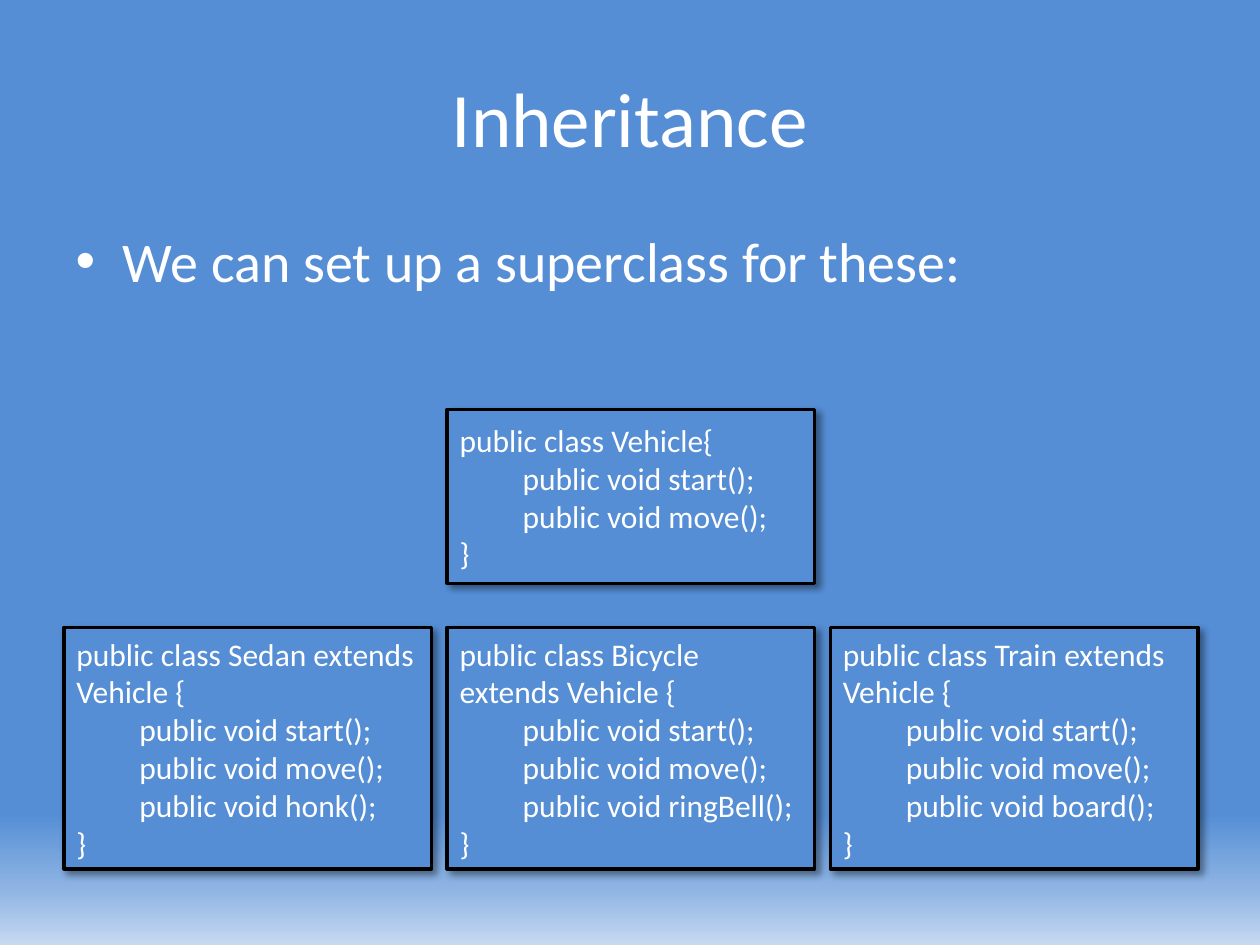
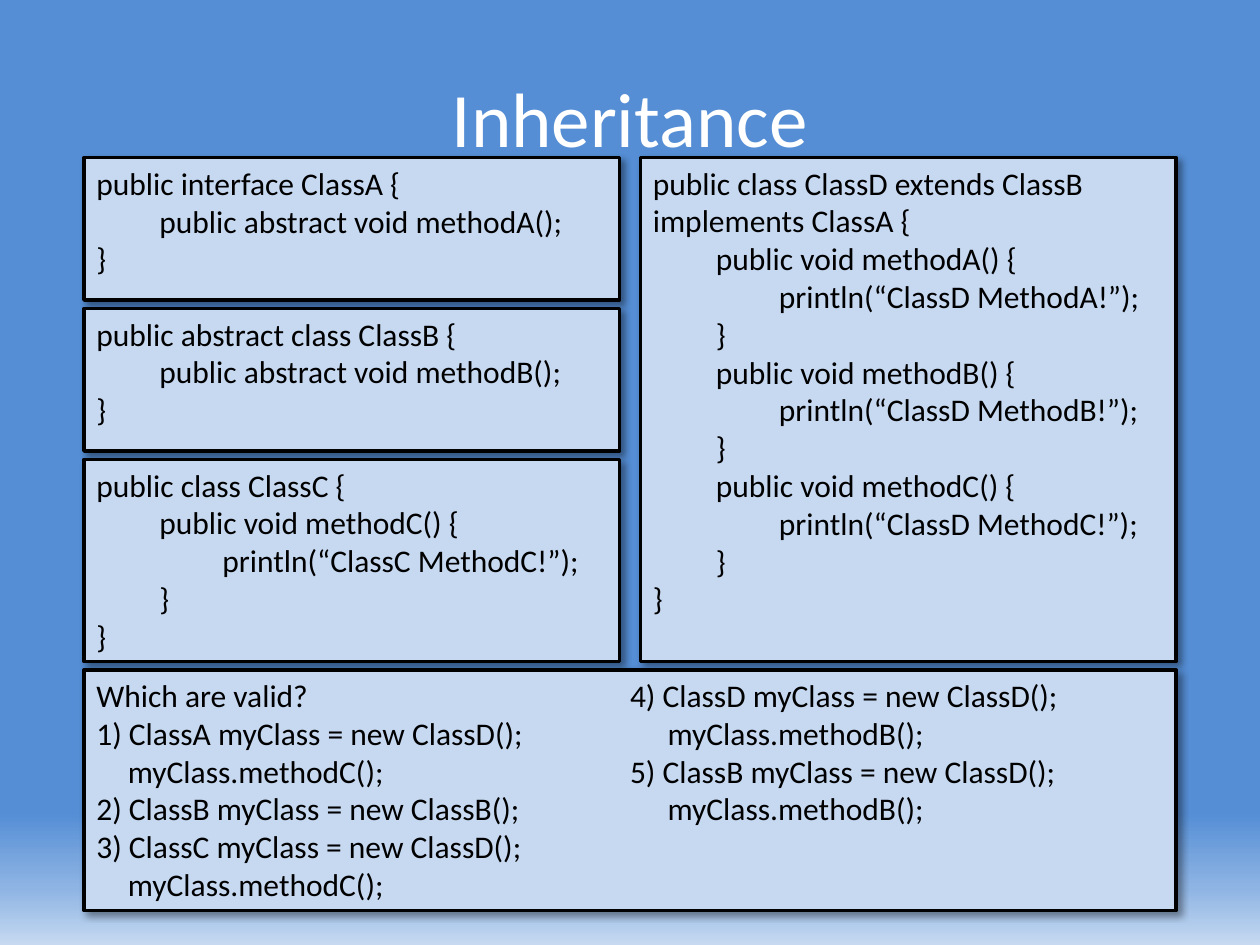
from lxml import etree
from pptx import Presentation
from pptx.dml.color import RGBColor
from pptx.enum.shapes import MSO_SHAPE
from pptx.enum.text import MSO_ANCHOR, PP_ALIGN
from pptx.oxml import parse_xml
from pptx.oxml.ns import nsdecls, qn
from pptx.util import Pt

RECTANGLE = MSO_SHAPE.RECTANGLE
TOP, MIDDLE = MSO_ANCHOR.TOP, MSO_ANCHOR.MIDDLE
LEFT, CENTER = PP_ALIGN.LEFT, PP_ALIGN.CENTER

COLORS = {"blue": "558ED5", "mid": "8EB4E3", "pale": "C6D9F1",
          "white": "FFFFFF", "black": "000000"}
FONT = "Calibri"
TAB = 36  # indent of one code level

SHADOW = f"""<a:effectLst {nsdecls("a")}>
  <a:outerShdw blurRad="{Pt(4)}" dist="{Pt(3)}" dir="2700000" algn="tl" rotWithShape="0">
    <a:srgbClr val="{COLORS["black"]}"><a:alpha val="40000"/></a:srgbClr>
  </a:outerShdw>
</a:effectLst>"""


def add_text(para, text, size, color, align):
    para.alignment = align
    span = para.add_run()
    span.text = text
    span.font.name = FONT
    span.font.size = Pt(size)
    span.font.color.rgb = RGBColor.from_string(COLORS[color])


def add_code_box(page, place, lines, fill, color, anchor):
    """Draw a bordered box; each line is a pair of indent in points and text."""
    box = page.shapes.add_shape(RECTANGLE, *[Pt(length) for length in place])
    box.fill.solid()
    box.fill.fore_color.rgb = RGBColor.from_string(COLORS[fill])
    box.line.color.rgb = RGBColor.from_string(COLORS["black"])
    box.line.width = Pt(2)
    box._element.spPr.append(parse_xml(SHADOW))
    frame = box.text_frame
    frame.word_wrap = True
    frame.vertical_anchor = anchor
    for number, (indent, text) in enumerate(lines):
        para = frame.add_paragraph() if number else frame.paragraphs[0]
        add_text(para, text, 18, color, LEFT)
        para._p.get_or_add_pPr().set("marL", str(Pt(indent)))
    return box


deck = Presentation()
deck.slide_width, deck.slide_height = Pt(720), Pt(540)

# Shared background: blue fading to pale at the bottom
backdrop = deck.slide_master.background.fill
backdrop.gradient()
backdrop.gradient_angle = 270
stops = deck.slide_master.element.find(".//" + qn("a:gsLst"))
for stop in list(stops):
    stops.remove(stop)
for percent, name in [(86, "blue"), (94, "mid"), (100, "pale")]:
    stop = etree.SubElement(stops, qn("a:gs"), pos=str(percent * 1000))
    etree.SubElement(stop, qn("a:srgbClr"), val=COLORS[name])

# Pages with their shared title
pages = []
for layout in ("Title and Content", "Title Only"):
    page = deck.slides.add_slide(deck.slide_layouts.get_by_name(layout))
    title = page.shapes.title
    title.left, title.top, title.width, title.height = Pt(36), Pt(21.6), Pt(648), Pt(90)
    title.text_frame.vertical_anchor = MIDDLE
    add_text(title.text_frame.paragraphs[0], "Inheritance", 44, "white", CENTER)
    pages.append(page)
superclass_page, quiz_page = pages

# Superclass page: bullet
body = superclass_page.placeholders[1]
body.left, body.top, body.width, body.height = Pt(36), Pt(126), Pt(648), Pt(356.4)
add_text(body.text_frame.paragraphs[0], "We can set up a superclass for these:",
         32, "white", LEFT)

# Superclass page: three subclasses in a row, the superclass above the middle one
row_left, box_width, pitch = 36.6, 210, 219
shared_methods = [(TAB, "public void start();"), (TAB, "public void move();")]
subclasses = [("Sedan", "honk"), ("Bicycle", "ringBell"), ("Train", "board")]
for column, (name, method) in enumerate(subclasses):
    lines = [(0, f"public class {name} extends Vehicle {{"), *shared_methods,
             (TAB, f"public void {method}();"), (0, "}")]
    add_code_box(superclass_page, (row_left + column * pitch, 358.5, box_width, 138),
                 lines, "blue", "white", MIDDLE)
add_code_box(superclass_page, (row_left + pitch, 234, box_width, 99.4),
             [(0, "public class Vehicle{"), *shared_methods, (0, "}")],
             "blue", "white", MIDDLE)

# Quiz page: code in two columns
left, top, column_width, gutter, gap = 48, 90, 306, 12, 4.75
methods_of_d = []
for letter in "ABC":
    methods_of_d += [(TAB, f"public void method{letter}() {{"),
                     (2 * TAB, f"println(“ClassD Method{letter}!”);"), (TAB, "}")]
left_boxes = [
    (81.5, [(0, "public interface ClassA {"),
            (TAB, "public abstract void methodA();"), (0, "}")]),
    (81.5, [(0, "public abstract class ClassB {"),
            (TAB, "public abstract void methodB();"), (0, "}")]),
    (115.5, [(0, "public class ClassC {"), (TAB, "public void methodC() {"),
             (2 * TAB, "println(“ClassC MethodC!”);"), (TAB, "}"), (0, "}")]),
]
box_top = top
for height, lines in left_boxes:
    add_code_box(quiz_page, (left, box_top, column_width, height),
                 lines, "pale", "black", TOP)
    box_top += height + gap
add_code_box(quiz_page,
             (left + column_width + gutter, top, column_width, box_top - gap - top),
             [(0, "public class ClassD extends ClassB implements ClassA {"),
              *methods_of_d, (0, "}")], "pale", "black", TOP)

# Quiz page: questions in one box with two text columns
questions = [
    (0, "Which are valid?"),
    (0, "1) ClassA myClass = new ClassD();"), (18, "myClass.methodC();"),
    (0, "2) ClassB myClass = new ClassB();"),
    (0, "3) ClassC myClass = new ClassD();"), (18, "myClass.methodC();"),
    (0, "4) ClassD myClass = new ClassD();"), (21.5, "myClass.methodB();"),
    (0, "5) ClassB myClass = new ClassD();"), (21.5, "myClass.methodB();"),
]
quiz = add_code_box(quiz_page, (left, box_top, 2 * column_width + gutter, 137.5),
                    questions, "pale", "black", TOP)
quiz.text_frame._txBody.bodyPr.set("numCol", "2")

deck.save("out.pptx")
